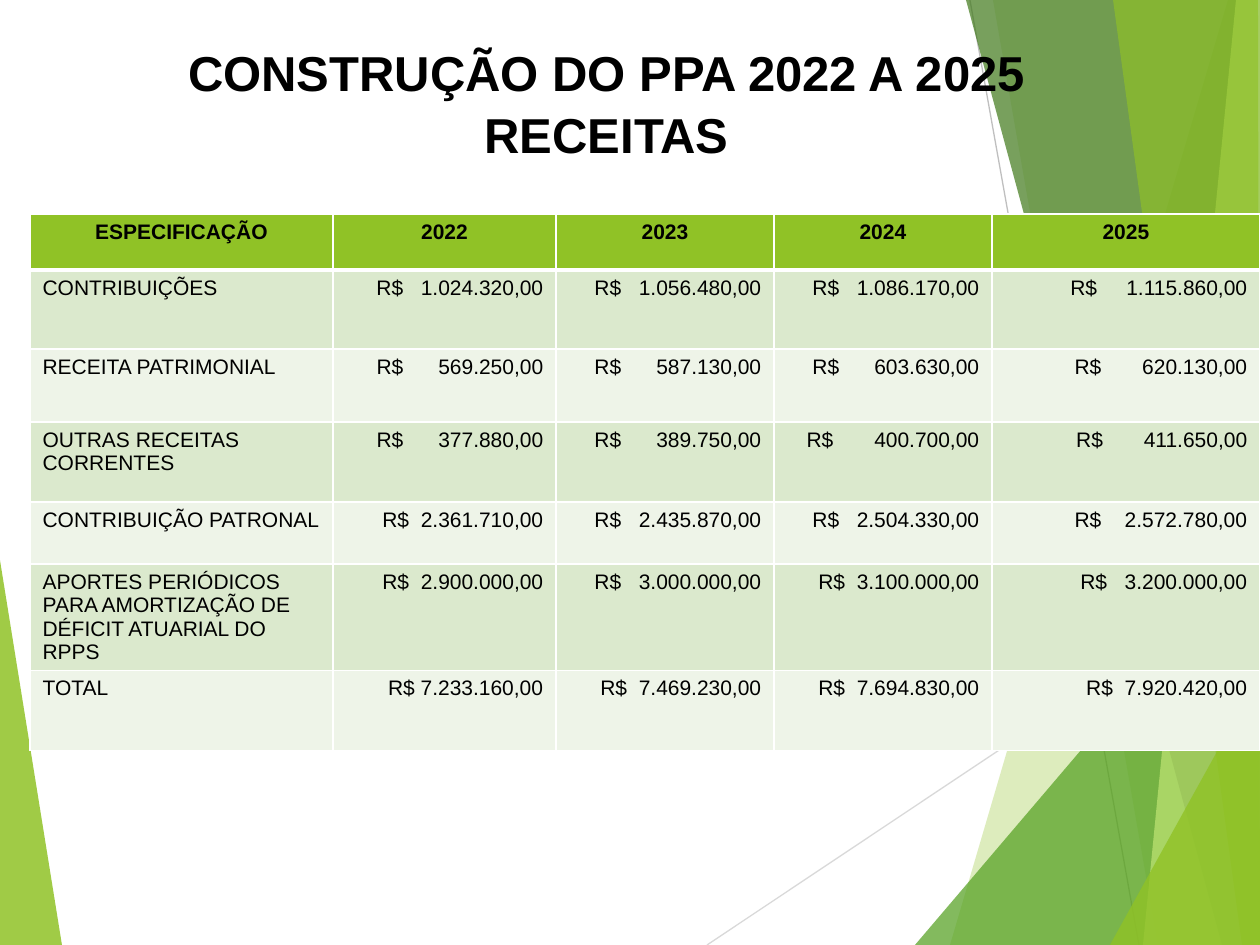
from lxml.etree import SubElement
from pptx import Presentation
from pptx.dml.color import RGBColor
from pptx.enum.shapes import MSO_CONNECTOR
from pptx.enum.text import MSO_ANCHOR, PP_ALIGN
from pptx.oxml import parse_xml
from pptx.oxml.ns import nsdecls, qn
from pptx.util import Pt

TITLE = ["CONSTRUÇÃO DO PPA 2022 A 2025", "RECEITAS"]
HEAD = ["ESPECIFICAÇÃO", "2022", "2023", "2024", "2025"]
ROWS = [
    ("CONTRIBUIÇÕES", ["1.024.320,00", "1.056.480,00", "1.086.170,00", "1.115.860,00"], (3, 3, 3, 5)),
    ("RECEITA PATRIMONIAL", ["569.250,00", "587.130,00", "603.630,00", "620.130,00"], (6, 6, 6, 7)),
    ("OUTRAS RECEITAS CORRENTES", ["377.880,00", "389.750,00", "400.700,00", "411.650,00"], (6, 6, 7, 7)),
    ("CONTRIBUIÇÃO PATRONAL", ["2.361.710,00", "2.435.870,00", "2.504.330,00", "2.572.780,00"], (2, 3, 3, 4)),
    ("APORTES PERIÓDICOS PARA AMORTIZAÇÃO DE DÉFICIT ATUARIAL DO RPPS",
     ["2.900.000,00", "3.000.000,00", "3.100.000,00", "3.200.000,00"], (2, 3, 2, 3)),
    ("TOTAL", ["7.233.160,00", "7.469.230,00", "7.694.830,00", "7.920.420,00"], (1, 2, 2, 2)),
]
WIDTHS = [303, 223, 218, 218, 268]
HEIGHTS = [56, 79, 73, 80, 62, 106, 80]

WHITE = RGBColor(0xFF, 0xFF, 0xFF)
BLACK = RGBColor(0, 0, 0)
LIME = RGBColor(0x90, 0xC2, 0x26)
GREEN = RGBColor(0x54, 0xA0, 0x21)
FOREST = RGBColor(0x3F, 0x78, 0x19)
PALE = RGBColor(0xC0, 0xE4, 0x74)
BANDS = [RGBColor(0xDB, 0xE9, 0xCD), RGBColor(0xEE, 0xF4, 0xE8)]
GRAY = RGBColor(0xD9, 0xD9, 0xD9)
SILVER = RGBColor(0xBF, 0xBF, 0xBF)

W, H = 1260, 945
LINES = [((707, H), (W, 576), GRAY), ((970, 0), (1139, H), SILVER)]
LEFT = ([(0, 560), (62, H), (0, H)], LIME, 85)
RIGHT = [
    ([(1228, 0), (950, H), (W, H), (W, 0)], LIME, 30),
    ([(993, 0), (1158, H), (W, H), (W, 0)], LIME, 20),
    ([(915, H), (W, 540), (W, H)], GREEN, 72),
    ([(966, 0), (1222, H), (W, H), (W, 0)], FOREST, 70),
    ([(1236, 0), (1143, H), (W, H), (W, 0)], PALE, 70),
    ([(1113, 0), (1242, H), (W, H), (1258, 0)], LIME, 65),
    ([(1110, H), (W, 674), (W, H)], LIME, 80),
]
SCALE = 914400 / 126
SPACE = 333


def px(n):
    return round(n * SCALE)


def style(font, size, bold):
    look = {"name": "Arial", "size": Pt(size), "bold": bold}
    for key, value in look.items():
        setattr(font, key, value)
    font.color.rgb = BLACK


def facet(shapes, points, color, alpha):
    pen = shapes.build_freeform(*points[0], scale=SCALE)
    pen.add_line_segments(points[1:], close=True)
    shape = pen.convert_to_shape()
    shape.shadow.inherit = False
    shape.line.fill.background()
    shape.fill.solid()
    shape.fill.fore_color.rgb = color
    tone = shape.fill._xPr.find(qn("a:solidFill"))[0]
    SubElement(tone, qn("a:alpha")).set("val", str(alpha * 1000))


def ray(shapes, start, end, color):
    line = shapes.add_connector(MSO_CONNECTOR.STRAIGHT, *map(px, start + end))
    line.line.color.rgb = color
    line.line.width = Pt(0.75)
    SubElement(line._element.spPr, qn("a:effectLst"))


def paint(cell, color, base):
    props = cell._tc.get_or_add_tcPr()
    for side, wide in {"L": 1, "R": 1, "T": 1, "B": base}.items():
        props.append(parse_xml(
            f'<a:ln{side} {nsdecls("a")} w="{Pt(wide)}"><a:solidFill>'
            f'<a:srgbClr val="{WHITE}"/></a:solidFill></a:ln{side}>'))
    cell.fill.solid()
    cell.fill.fore_color.rgb = color


def write(cell, parts, align, bold=False):
    para = cell.text_frame.paragraphs[0]
    para.alignment = align
    for text, extra in parts:
        run = para.add_run()
        run.text = text
        style(run.font, 12, bold)
        if extra:
            run._r.get_or_add_rPr().set("spc", str(extra))


def grid(shapes):
    frame = shapes.add_table(len(HEIGHTS), len(WIDTHS), px(30), px(214),
                             px(sum(WIDTHS)), px(sum(HEIGHTS)))
    table = frame.table
    for col, wide in zip(table.columns, WIDTHS):
        col.width = px(wide)
    for row, tall in zip(table.rows, HEIGHTS):
        row.height = px(tall)
    for c, text in enumerate(HEAD):
        paint(table.cell(0, c), LIME, 3)
        write(table.cell(0, c), [(text, 0)], PP_ALIGN.CENTER, True)
    for r, (label, sums, gaps) in enumerate(ROWS, 1):
        for c in range(len(HEAD)):
            paint(table.cell(r, c), BANDS[(r - 1) % 2], 1)
        write(table.cell(r, 0), [(label, 0)], PP_ALIGN.LEFT)
        for c, (value, gap) in enumerate(zip(sums, gaps), 1):
            parts = [("R$", 0), (" ", (gap - 1) * SPACE), (value, 0)]
            write(table.cell(r, c), parts, PP_ALIGN.RIGHT)


def head(title):
    box = {"left": 74, "top": 40, "width": 1065, "height": 122}
    for key, value in box.items():
        setattr(title, key, px(value))
    frame = title.text_frame
    frame.text = "\n".join(TITLE)
    frame.word_wrap = True
    frame.vertical_anchor = MSO_ANCHOR.MIDDLE
    for para in frame.paragraphs:
        para.alignment = PP_ALIGN.CENTER
        para.line_spacing = 1.06
        para.space_before = Pt(0)
        style(para.runs[0].font, 28, True)
    title._element.getparent().append(title._element)


def main():
    deck = Presentation()
    deck.slide_width, deck.slide_height = px(W), px(H)
    slide = deck.slides.add_slide(deck.slide_layouts[5])
    shapes = slide.shapes
    facet(shapes, *LEFT)
    for item in LINES:
        ray(shapes, *item)
    for item in RIGHT:
        facet(shapes, *item)
    grid(shapes)
    head(shapes.title)
    deck.save("out.pptx")


if __name__ == "__main__":
    main()
